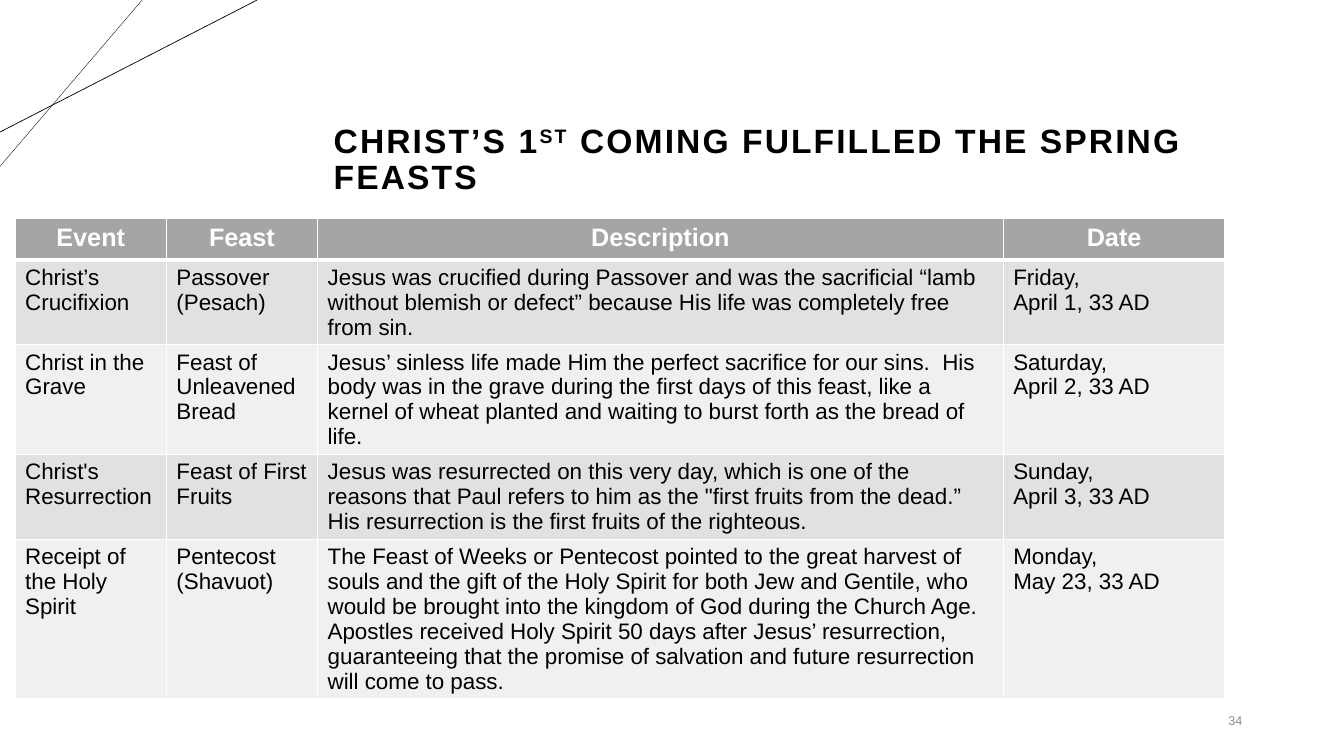
from dataclasses import dataclass

from lxml.etree import SubElement
from pptx import Presentation
from pptx.dml.color import RGBColor
from pptx.enum.shapes import MSO_CONNECTOR
from pptx.enum.text import MSO_ANCHOR, MSO_AUTO_SIZE, PP_ALIGN
from pptx.oxml.ns import qn
from pptx.util import Inches, Pt

COLORS = {"ink": "000000", "white": "FFFFFF", "header": "A5A5A5",
          "odd": "E1E1E1", "even": "F0F0F0", "number": "8C8C8C"}
FONT = "Arial"


@dataclass(frozen=True)
class CornerLine:
    top_x: float
    left_y: float
    width: float


@dataclass(frozen=True)
class FeastRow:
    event: str
    feast: str
    description: str
    date: str
    height: float


CORNER_LINES = [CornerLine(1.41, 1.65, 0.25), CornerLine(2.55, 1.31, 0.5)]
COLUMN_WIDTHS = [1.5, 1.5, 6.8, 2.2]
ROWS = [
    FeastRow("Event", "Feast", "Description", "Date", 0.41),
    FeastRow("Christ’s Crucifixion", "Passover (Pesach)",
             "Jesus was crucified during Passover and was the sacrificial “lamb without "
             "blemish or defect” because His life was completely free from sin.",
             "Friday,\nApril 1, 33 AD", 0.84),
    FeastRow("Christ in the Grave", "Feast of Unleavened Bread",
             "Jesus’ sinless life made Him the perfect sacrifice for our sins.  His body "
             "was in the grave during the first days of this feast, like a kernel of wheat "
             "planted and waiting to burst forth as the bread of life.",
             "Saturday,\nApril 2, 33 AD", 1.09),
    FeastRow("Christ's Resurrection", "Feast of First Fruits",
             "Jesus was resurrected on this very day, which is one of the reasons that Paul "
             "refers to him as the \"first fruits from the dead.”  His resurrection is the "
             "first fruits of the righteous.",
             "Sunday,\nApril 3, 33 AD", 0.84),
    FeastRow("Receipt of the Holy Spirit", "Pentecost (Shavuot)",
             "The Feast of Weeks or Pentecost pointed to the great harvest of souls and the "
             "gift of the Holy Spirit for both Jew and Gentile, who would be brought into the "
             "kingdom of God during the Church Age. Apostles received Holy Spirit 50 days "
             "after Jesus’ resurrection, guaranteeing that the promise of salvation and "
             "future resurrection will come to pass.",
             "Monday,\nMay 23, 33 AD", 1.58),
]


def rgb(name: str) -> RGBColor:
    return RGBColor.from_string(COLORS[name])


def style_font(font, size: float, color: str, bold: bool = False) -> None:
    for key, value in {"name": FONT, "size": Pt(size), "bold": bold}.items():
        setattr(font, key, value)
    font.color.rgb = rgb(color)


def place(shape, left: float, top: float, width: float, height: float) -> None:
    box = {"left": left, "top": top, "width": width, "height": height}
    for key, value in box.items():
        setattr(shape, key, Inches(value))


def style_frame(frame) -> None:
    settings = {"word_wrap": True, "auto_size": MSO_AUTO_SIZE.NONE,
                "vertical_anchor": MSO_ANCHOR.MIDDLE}
    for key, value in settings.items():
        setattr(frame, key, value)


def draw_corner_line(slide, corner: CornerLine) -> None:
    line = slide.shapes.add_connector(
        MSO_CONNECTOR.STRAIGHT, Inches(corner.top_x), 0, 0, Inches(corner.left_y))
    line.line.color.rgb = rgb("ink")
    line.line.width = Pt(corner.width)
    SubElement(line._element.spPr, qn("a:effectLst"))


def draw_title(slide) -> None:
    title = slide.shapes.title
    place(title, 3.21, 0.62, 9.21, 1.95)
    style_frame(title.text_frame)
    heading = title.text_frame.paragraphs[0]
    heading.alignment = PP_ALIGN.LEFT
    heading.line_spacing = 0.9
    parts = [("CHRIST’S 1", 0), ("ST", 30), (" COMING FULFILLED THE SPRING FEASTS", 0)]
    for text, raised in parts:
        run = heading.add_run()
        run.text = text
        style_font(run.font, 24, "ink", True)
        properties = run._r.get_or_add_rPr()
        properties.set("spc", "150")
        properties.set("baseline", str(raised * 1000))


def set_borders(cell, bottom_width: float, top_width: float) -> None:
    properties = cell._tc.get_or_add_tcPr()
    widths = {"a:lnL": 1, "a:lnR": 1, "a:lnT": top_width, "a:lnB": bottom_width}
    for tag, width in widths.items():
        border = SubElement(properties, qn(tag), w=str(Pt(width)))
        fill = SubElement(border, qn("a:solidFill"))
        SubElement(fill, qn("a:srgbClr"), val=COLORS["white"])


def fill_row(table, index: int, row: FeastRow) -> None:
    is_header = index == 0
    table.rows[index].height = Inches(row.height)
    fill = "header" if is_header else "odd" if index % 2 else "even"
    for column, text in enumerate([row.event, row.feast, row.description, row.date]):
        cell = table.cell(index, column)
        cell.text = text
        # Borders come before the fill in the cell properties
        set_borders(cell, 3 if is_header else 1, 3 if index == 1 else 1)
        cell.fill.solid()
        cell.fill.fore_color.rgb = rgb(fill)
        for paragraph in cell.text_frame.paragraphs:
            paragraph.alignment = PP_ALIGN.CENTER if is_header else PP_ALIGN.LEFT
            for run in paragraph.runs:
                style_font(run.font, 18 if is_header else 16,
                           "white" if is_header else "ink", is_header)


def draw_feasts(slide) -> None:
    table = slide.shapes.add_table(
        len(ROWS), len(COLUMN_WIDTHS), Inches(0.15), Inches(2.17),
        Inches(sum(COLUMN_WIDTHS)), Inches(sum(row.height for row in ROWS))).table
    table.horz_banding = False
    for column, width in zip(table.columns, COLUMN_WIDTHS):
        column.width = Inches(width)
    for index, row in enumerate(ROWS):
        fill_row(table, index, row)


def draw_page_number(slide) -> None:
    number = slide.shapes.add_textbox(
        Inches(11.34), Inches(6.95), Inches(1.08), Inches(0.4))
    style_frame(number.text_frame)
    paragraph = number.text_frame.paragraphs[0]
    paragraph.alignment = PP_ALIGN.RIGHT
    run = paragraph.add_run()
    run.text = "34"
    style_font(run.font, 9, "number")


def main() -> None:
    deck = Presentation()
    deck.slide_width, deck.slide_height = Inches(13.33), Inches(7.5)
    slide = deck.slides.add_slide(deck.slide_layouts[5])

    # Crossing lines in the corner
    for corner in CORNER_LINES:
        draw_corner_line(slide, corner)

    # Heading, feast table and page number
    draw_title(slide)
    draw_feasts(slide)
    draw_page_number(slide)
    deck.save("out.pptx")


if __name__ == "__main__":
    main()
